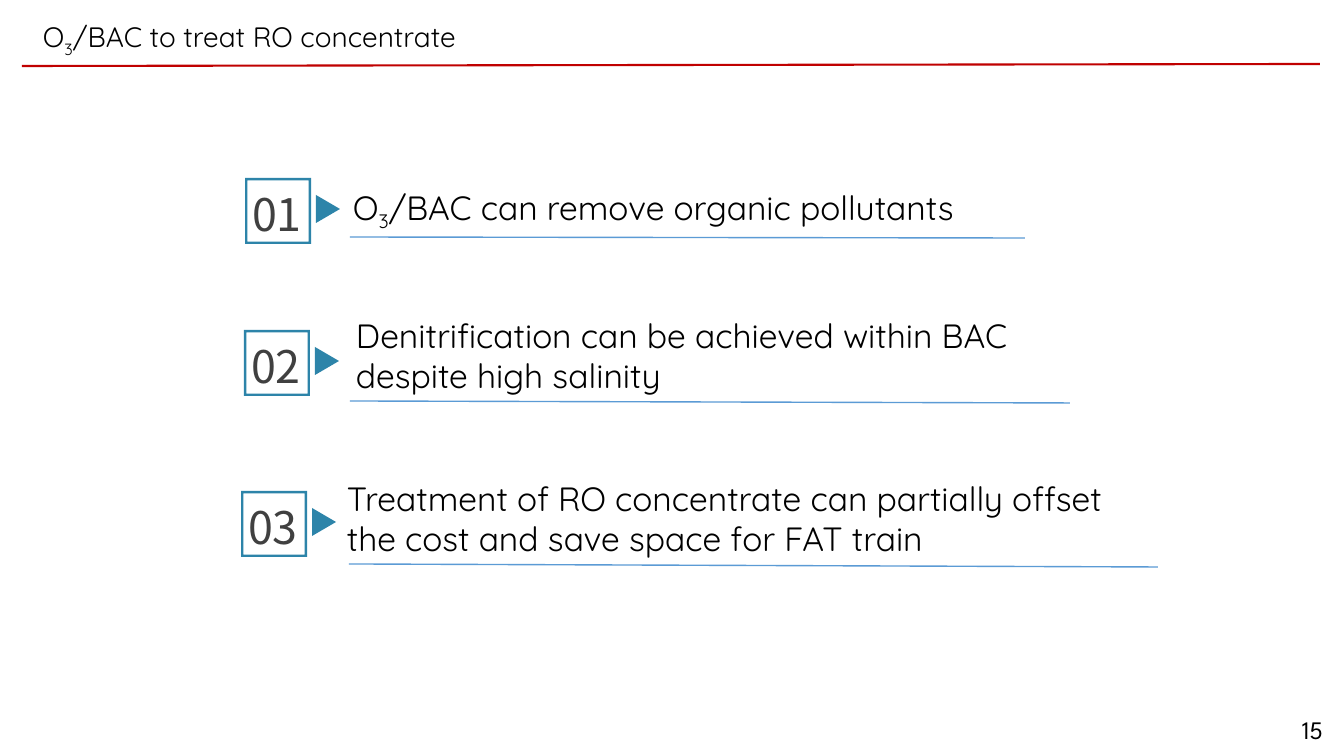
from lxml.etree import SubElement
from pptx import Presentation
from pptx.dml.color import RGBColor
from pptx.enum.shapes import MSO_CONNECTOR, MSO_SHAPE
from pptx.enum.text import MSO_AUTO_SIZE, PP_ALIGN
from pptx.oxml.ns import qn
from pptx.util import Pt

PX = 914400 / 100.8
COLORS = {"red": "C00000", "teal": "2D84A9", "blue": "5B9BD5", "grey": "404040", "black": "000000"}
BODY_FONT, NUMBER_FONT, PAGE_FONT = "Quicksand", "Noto Sans CJK SC", "League Spartan"

HEADING = ("O", "3", "/BAC to treat RO concentrate")
PAGE = ("15",)
FINDINGS = [
    {"number": "01", "words": ("O", "3", "/BAC can remove organic pollutants"),
     "badge": (245, 178), "box": (343, 182, 768, 50), "rule": (350, 237, 1025, 238)},
    {"number": "02", "words": ("Denitrification can be achieved within BAC despite high salinity",),
     "badge": (244, 330), "box": (346, 310, 725, 92), "rule": (350, 401, 1070, 403)},
    {"number": "03",
     "words": ("Treatment of RO concentrate can partially offset the cost and save space for FAT train",),
     "badge": (241, 491), "box": (337, 473, 823, 92), "rule": (349, 564, 1158, 567)},
]


def emu(*lengths):
    return [round(length * PX) for length in lengths]


def color(name):
    return RGBColor.from_string(COLORS[name])


def add_text(shapes, box, words, size=24, font=BODY_FONT, ink="black", align=PP_ALIGN.LEFT):
    frame = shapes.add_textbox(*emu(*box)).text_frame
    frame.word_wrap = True
    frame.auto_size = MSO_AUTO_SIZE.SHAPE_TO_FIT_TEXT
    paragraph = frame.paragraphs[0]
    paragraph.alignment = align
    for position, part in enumerate(words):
        run = paragraph.add_run()
        run.text = part
        run.font.size = Pt(size)
        run.font.name = font
        run.font.color.rgb = color(ink)
        if position % 2:
            run.font._element.set("baseline", "-25000")


def add_rule(shapes, ends, ink, weight):
    rule = shapes.add_connector(MSO_CONNECTOR.STRAIGHT, *emu(*ends))
    rule.line.color.rgb = color(ink)
    rule.line.width = Pt(weight)
    SubElement(rule._element.spPr, qn("a:effectLst"))


def add_solid(shapes, kind, box):
    solid = shapes.add_shape(kind, *emu(*box))
    solid.shadow.inherit = False
    solid.fill.solid()
    solid.fill.fore_color.rgb = color("teal")
    solid.line.fill.background()
    return solid


def add_badge(shapes, left, top, number):
    badge = shapes.add_group_shape().shapes
    border = add_solid(badge, MSO_SHAPE.FRAME, (left, top, 66, 66))
    border.adjustments[0] = 0.036
    pointer = add_solid(badge, MSO_SHAPE.ISOSCELES_TRIANGLE, (left + 69, top + 19, 28, 24))
    pointer.rotation = 90
    add_text(badge, (left - 27, top + 4, 118, 64), (number,), size=32,
             font=NUMBER_FONT, ink="grey", align=PP_ALIGN.CENTER)


def main():
    deck = Presentation()
    deck.slide_width, deck.slide_height = emu(1344, 756)
    shapes = deck.slides.add_slide(deck.slide_layouts[6]).shapes
    add_text(shapes, (1292, 709, 51, 40), PAGE, size=18, font=PAGE_FONT)
    add_rule(shapes, (22, 66, 1320, 64), "red", 1.5)
    add_text(shapes, (33, 15, 1310, 44), HEADING, size=20)
    for finding in FINDINGS:
        add_badge(shapes, *finding["badge"], finding["number"])
        add_rule(shapes, finding["rule"], "blue", 1)
        add_text(shapes, finding["box"], finding["words"])
    deck.save("out.pptx")


if __name__ == "__main__":
    main()
